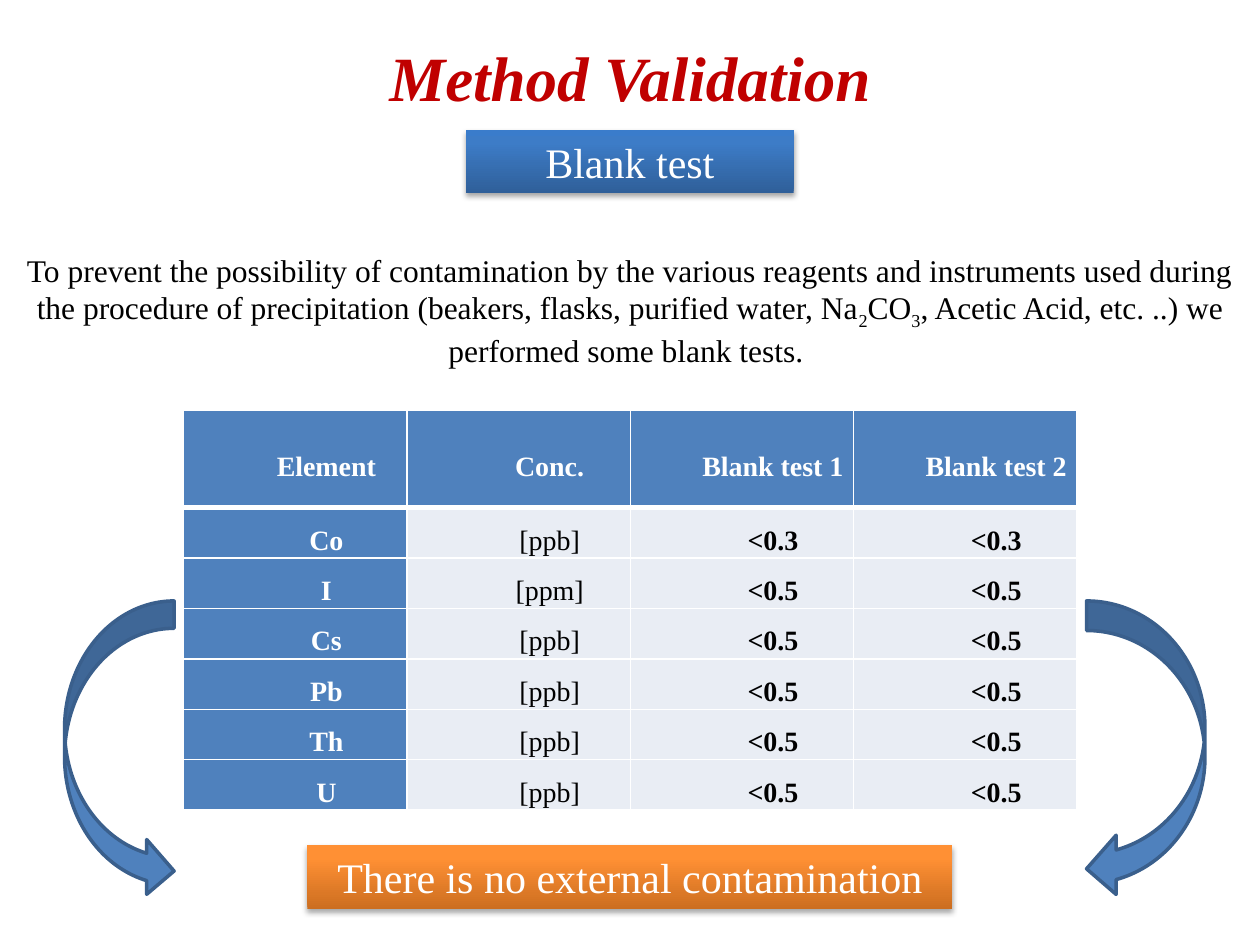
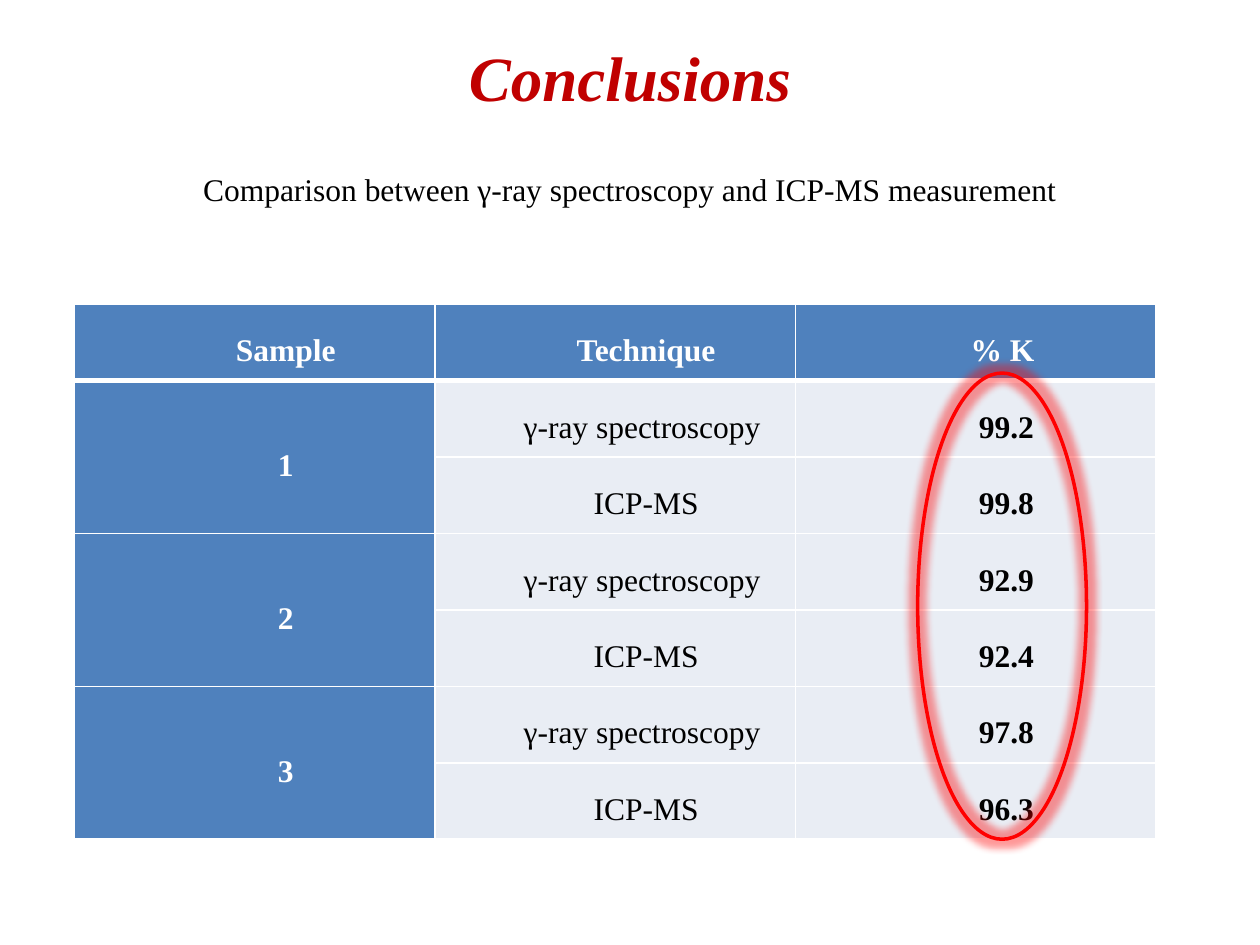
from pptx import Presentation
from pptx.dml.color import RGBColor
from pptx.enum.shapes import MSO_SHAPE
from pptx.enum.text import MSO_ANCHOR, PP_ALIGN
from pptx.oxml import parse_xml
from pptx.oxml.ns import nsdecls, qn
from pptx.util import Pt

CENTER = PP_ALIGN.CENTER
MIDDLE = MSO_ANCHOR.MIDDLE
RECTANGLE = MSO_SHAPE.RECTANGLE
OVAL = MSO_SHAPE.OVAL
CURVED_RIGHT = MSO_SHAPE.CURVED_RIGHT_ARROW
CURVED_LEFT = MSO_SHAPE.CURVED_LEFT_ARROW

FONT = "Times New Roman"
TITLE_ONLY = 5
SLIDE_WIDTH, SLIDE_HEIGHT = 720, 540
COLORS = {
    "title": "C00000",
    "text": "000000",
    "white": "FFFFFF",
    "header": "4F81BD",
    "body": "E9EDF4",
    "arrow_line": "3A5F8C",
    "highlight": "FF0000",
}
BLUE_STOPS = [(0, "2F5F99"), (80, "3D7CC7"), (100, "3A7CCB")]
ORANGE_STOPS = [(0, "CC6E20"), (80, "FF9034"), (100, "FF9136")]

BLANK_TEST_ROWS = [("Element", "Conc.", "Blank test 1", "Blank test 2")] + [
    (element, unit, limit, limit)
    for element, unit, limit in [
        ("Co", "[ppb]", "<0.3"),
        ("I", "[ppm]", "<0.5"),
        ("Cs", "[ppb]", "<0.5"),
        ("Pb", "[ppb]", "<0.5"),
        ("Th", "[ppb]", "<0.5"),
        ("U", "[ppb]", "<0.5"),
    ]
]
COMPARISON_ROWS = [
    ("Sample", "Technique", "% K "),
    ("1", "γ-ray spectroscopy ", "99.2"),
    ("", "ICP-MS", "99.8"),
    ("2", "γ-ray spectroscopy ", "92.9"),
    ("", "ICP-MS", "92.4"),
    ("3", "γ-ray spectroscopy ", "97.8"),
    ("", "ICP-MS", "96.3"),
]


def color(name):
    return RGBColor.from_string(COLORS[name])


def add_run(paragraph, text, size, color_name, bold=False, italic=False, subscript=False):
    run = paragraph.add_run()
    run.text = text
    run.font.name = FONT
    run.font.size = Pt(size)
    run.font.bold = bold
    run.font.italic = italic
    run.font.color.rgb = color(color_name)
    if subscript:
        run.font._element.set("baseline", "-25000")


def add_titled_slide(presentation, title):
    slide = presentation.slides.add_slide(presentation.slide_layouts[TITLE_ONLY])
    shape = slide.shapes.title
    shape.left, shape.top, shape.width, shape.height = Pt(36), Pt(-1.5), Pt(648), Pt(90)
    shape.text_frame.vertical_anchor = MIDDLE
    paragraph = shape.text_frame.paragraphs[0]
    paragraph.alignment = CENTER
    add_run(paragraph, title, 36, "title", bold=True, italic=True)
    return slide


def add_statement(slide, top, height, pieces):
    shape = slide.shapes.add_textbox(0, Pt(top), Pt(SLIDE_WIDTH), Pt(height))
    shape.text_frame.word_wrap = True
    paragraph = shape.text_frame.paragraphs[0]
    paragraph.alignment = CENTER
    for text, subscript in pieces:
        add_run(paragraph, text, 18, "text", subscript=subscript)


def add_shape(slide, kind, left, top, width, height):
    shape = slide.shapes.add_shape(kind, Pt(left), Pt(top), Pt(width), Pt(height))
    shape.shadow.inherit = False
    return shape


def add_effect(shape, xml):
    shape._element.spPr.find(qn("a:effectLst")).append(parse_xml(xml))


def add_banner(slide, text, top, width, stops):
    shape = add_shape(slide, RECTANGLE, (SLIDE_WIDTH - width) / 2, top, width, 36.35)
    shape.line.fill.background()
    shape.fill.gradient()
    properties = shape._element.spPr
    stop_xml = "".join(
        f'<a:gs pos="{position * 1000}"><a:srgbClr val="{value}"/></a:gs>'
        for position, value in stops
    )
    properties.replace(
        properties.find(qn("a:gradFill")),
        parse_xml(
            f'<a:gradFill {nsdecls("a")} rotWithShape="1"><a:gsLst>{stop_xml}</a:gsLst>'
            '<a:lin ang="16200000" scaled="0"/></a:gradFill>'
        ),
    )
    add_effect(
        shape,
        f'<a:outerShdw {nsdecls("a")} blurRad="{Pt(3.15)}" dist="{Pt(1.8)}" dir="5400000" '
        f'rotWithShape="0"><a:srgbClr val="{COLORS["text"]}"><a:alpha val="35000"/>'
        "</a:srgbClr></a:outerShdw>",
    )
    shape.text_frame.vertical_anchor = MIDDLE
    paragraph = shape.text_frame.paragraphs[0]
    paragraph.alignment = CENTER
    add_run(paragraph, text, 24, "white")


def add_curved_arrow(slide, kind, left, width):
    shape = add_shape(slide, kind, left, 343.4, width, 170)
    shape.fill.solid()
    shape.fill.fore_color.rgb = color("header")
    shape.line.color.rgb = color("arrow_line")
    shape.line.width = Pt(2)


def add_glowing_oval(slide, left, top, width, height):
    shape = add_shape(slide, OVAL, left, top, width, height)
    shape.fill.background()
    shape.line.color.rgb = color("highlight")
    shape.line.width = Pt(2)
    add_effect(
        shape,
        f'<a:glow {nsdecls("a")} rad="{Pt(8)}"><a:srgbClr val="{COLORS["highlight"]}">'
        '<a:alpha val="40000"/></a:srgbClr></a:glow>',
    )


def set_borders(cell, top, bottom):
    properties = cell._tc.get_or_add_tcPr()
    for side, width in (("L", 1), ("R", 1), ("T", top), ("B", bottom)):
        properties.append(
            parse_xml(
                f'<a:ln{side} {nsdecls("a")} w="{Pt(width)}"><a:solidFill>'
                f'<a:srgbClr val="{COLORS["white"]}"/></a:solidFill></a:ln{side}>'
            )
        )


def fill_cell(cell, text, size, row, column):
    is_heading = row == 0 or column == 0
    set_borders(cell, top=3 if row == 1 else 1, bottom=3 if row == 0 else 1)
    cell.fill.solid()
    cell.fill.fore_color.rgb = color("header" if is_heading else "body")
    cell.vertical_anchor = MIDDLE
    cell.margin_left = cell.margin_right = Pt(5.4)
    cell.margin_top = cell.margin_bottom = 0
    paragraph = cell.text_frame.paragraphs[0]
    paragraph.alignment = CENTER
    paragraph.line_spacing = 1.5
    paragraph._p.get_or_add_pPr().set("indent", str(Pt(35.4)))
    if text:
        add_run(paragraph, text, size, "white" if is_heading else "text",
                bold=is_heading or column != 1)


def add_data_table(slide, rows, left, top, column_width, header_height, row_height, size):
    column_count = len(rows[0])
    height = header_height + row_height * (len(rows) - 1)
    table = slide.shapes.add_table(
        len(rows), column_count, Pt(left), Pt(top), Pt(column_width * column_count), Pt(height)
    ).table
    table.horz_banding = False
    for column in table.columns:
        column.width = Pt(column_width)
    for row, values in enumerate(rows):
        table.rows[row].height = Pt(row_height if row else header_height)
        for column, text in enumerate(values):
            fill_cell(table.cell(row, column), text, size, row, column)
    return table


def build_validation_slide(presentation):
    slide = add_titled_slide(presentation, "Method Validation")
    add_banner(slide, "Blank test", 74.2, 187.2, BLUE_STOPS)
    add_statement(slide, 139.7, 72.7, [
        ("To prevent the possibility of contamination by the various reagents and instruments "
         "used during the procedure of precipitation (beakers, flasks, purified water, Na", False),
        ("2", True),
        ("CO", False),
        ("3", True),
        (", Acetic Acid, etc. ..) we performed some blank tests. ", False),
    ])
    add_data_table(slide, BLANK_TEST_ROWS, 105, 234.7, 127.6, 55.4, 28.8, 16)
    add_banner(slide, "There is no external contamination", 483, 368.6, ORANGE_STOPS)
    add_curved_arrow(slide, CURVED_RIGHT, 36.9, 62.6)
    add_curved_arrow(slide, CURVED_LEFT, 620.9, 67.7)


def build_conclusions_slide(presentation):
    slide = add_titled_slide(presentation, "Conclusions")
    add_statement(slide, 93.6, 29, [
        ("Comparison between γ-ray spectroscopy and ICP-MS measurement", False),
    ])
    table = add_data_table(slide, COMPARISON_ROWS, 42.7, 173.8, 205.9, 43.7, 43.7, 18)
    for row in range(1, len(COMPARISON_ROWS), 2):
        table.cell(row, 0).merge(table.cell(row + 1, 0))
    add_glowing_oval(slide, 524.4, 213.2, 96.5, 266.4)


def main():
    presentation = Presentation()
    presentation.slide_width = Pt(SLIDE_WIDTH)
    presentation.slide_height = Pt(SLIDE_HEIGHT)
    build_validation_slide(presentation)
    build_conclusions_slide(presentation)
    presentation.save("out.pptx")


if __name__ == "__main__":
    main()
